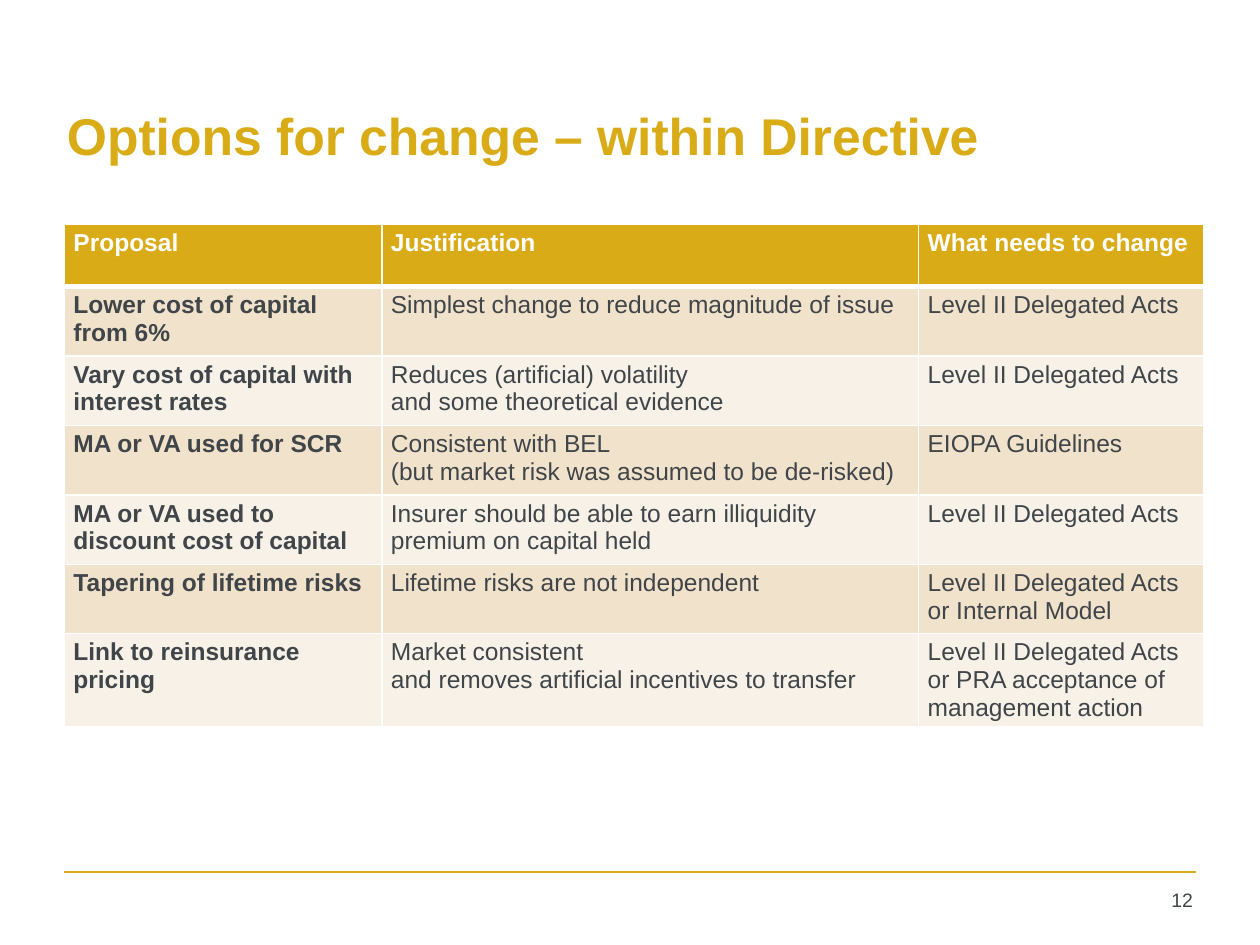
import dataclasses

import lxml.etree
import pptx
import pptx.dml.color
import pptx.enum.shapes
import pptx.enum.text
import pptx.oxml.ns
import pptx.util

Cm = pptx.util.Cm
Pt = pptx.util.Pt
ALIGN = pptx.enum.text.PP_ALIGN
ANCHOR = pptx.enum.text.MSO_ANCHOR


@dataclasses.dataclass(frozen=True)
class Theme:
    font: str = "Arial"
    gold: str = "D9AB16"
    ink: str = "3F4548"
    white: str = "FFFFFF"
    bands: tuple = ("F1E2CC", "F8F1E8")
    title_size: float = 29.5
    table_size: float = 14
    number_size: float = 11.1
    rule_width: float = 1
    header_rule_width: float = 3


HEADINGS = ("Proposal", "Justification", "What needs to change")
PROPOSALS = (
    ("Lower cost of capital from 6%",
     "Simplest change to reduce magnitude of issue",
     "Level II Delegated Acts"),
    ("Vary cost of capital with interest rates",
     "Reduces (artificial) volatility\nand some theoretical evidence",
     "Level II Delegated Acts"),
    ("MA or VA used for SCR",
     "Consistent with BEL\n(but market risk was assumed to be de-risked)",
     "EIOPA Guidelines"),
    ("MA or VA used to discount cost of capital",
     "Insurer should be able to earn illiquidity premium on capital held",
     "Level II Delegated Acts"),
    ("Tapering of lifetime risks",
     "Lifetime risks are not independent",
     "Level II Delegated Acts\nor Internal Model"),
    ("Link to reinsurance pricing",
     "Market consistent\nand removes artificial incentives to transfer",
     "Level II Delegated Acts or PRA acceptance of management action"),
)


def rgb(color):
    return pptx.dml.color.RGBColor.from_string(color)


def write(frame, text, *, font, size, color, bold=False, align=ALIGN.LEFT):
    """Fill the first paragraph of a frame; newlines become line breaks."""
    frame.word_wrap = True
    paragraph = frame.paragraphs[0]
    paragraph.text = text
    paragraph.alignment = align
    for run in paragraph.runs:
        run.font.name = font
        run.font.size = Pt(size)
        run.font.bold = bold
        run.font.color.rgb = rgb(color)


def set_borders(cell, color, **widths):
    """Draw the cell's edges, given as L, R, T and B widths in points."""
    properties = cell._tc.get_or_add_tcPr()
    for side, width in widths.items():
        edge = lxml.etree.SubElement(
            properties, pptx.oxml.ns.qn(f"a:ln{side}"), w=str(Pt(width)))
        fill = lxml.etree.SubElement(edge, pptx.oxml.ns.qn("a:solidFill"))
        lxml.etree.SubElement(fill, pptx.oxml.ns.qn("a:srgbClr"), val=color)


class SlideBuilder:
    def __init__(self, slide, theme):
        self.slide = slide
        self.theme = theme

    def text(self, text, left, top, width, height, anchor=ANCHOR.TOP, **style):
        box = self.slide.shapes.add_textbox(
            Cm(left), Cm(top), Cm(width), Cm(height))
        box.text_frame.vertical_anchor = anchor
        write(box.text_frame, text, font=self.theme.font, **style)

    def rule(self, left, right, y):
        rule = self.slide.shapes.add_connector(
            pptx.enum.shapes.MSO_CONNECTOR.STRAIGHT,
            Cm(left), Cm(y), Cm(right), Cm(y))
        rule.line.color.rgb = rgb(self.theme.gold)
        rule.line.width = Pt(self.theme.rule_width)
        lxml.etree.SubElement(
            rule._element.spPr, pptx.oxml.ns.qn("a:effectLst"))

    def table(self, rows, left, top, widths, header_height, row_height):
        """Add a table with a gold header, bold first column and two bands."""
        heights = [header_height] + [row_height] * (len(rows) - 1)
        table = self.slide.shapes.add_table(
            len(rows), len(widths), Cm(left), Cm(top),
            Cm(sum(widths)), Cm(sum(heights))).table
        for column, width in zip(table.columns, widths):
            column.width = Cm(width)
        for row, height in zip(table.rows, heights):
            row.height = Cm(height)
        for row_index, row in enumerate(rows):
            for column_index, text in enumerate(row):
                self.cell(table.cell(row_index, column_index), text,
                          row_index, column_index)

    def cell(self, cell, text, row_index, column_index):
        theme = self.theme
        is_header = row_index == 0
        cell.margin_left = cell.margin_right = Cm(0.18)
        cell.margin_top = cell.margin_bottom = Cm(0.1)
        thin, thick = theme.rule_width, theme.header_rule_width
        set_borders(cell, theme.white, L=thin, R=thin,
                    T=thick if row_index == 1 else thin,
                    B=thick if is_header else thin)
        cell.fill.solid()
        cell.fill.fore_color.rgb = rgb(
            theme.gold if is_header else theme.bands[(row_index - 1) % 2])
        write(cell.text_frame, text, font=theme.font, size=theme.table_size,
              color=theme.white if is_header else theme.ink,
              bold=is_header or column_index == 0)


def main():
    theme = Theme()
    presentation = pptx.Presentation()
    presentation.slide_width = Cm(25.4)
    presentation.slide_height = Cm(19.05)
    blank_layout = presentation.slide_layouts[6]
    builder = SlideBuilder(presentation.slides.add_slide(blank_layout), theme)

    builder.rule(1.3, 24.1, 17.58)
    builder.table((HEADINGS, *PROPOSALS), 1.3, 4.53,
                  widths=(6.4, 10.82, 5.74),
                  header_height=1.25, row_height=1.4)
    builder.text("12", 22.5, 17.78, 1.8, 0.94, size=theme.number_size,
                 color=theme.ink, align=ALIGN.RIGHT)
    builder.text("Options for change – within Directive",
                 1.1, 1.12, 23.04, 3.18, anchor=ANCHOR.MIDDLE,
                 size=theme.title_size, color=theme.gold, bold=True)
    presentation.save("out.pptx")


if __name__ == "__main__":
    main()
